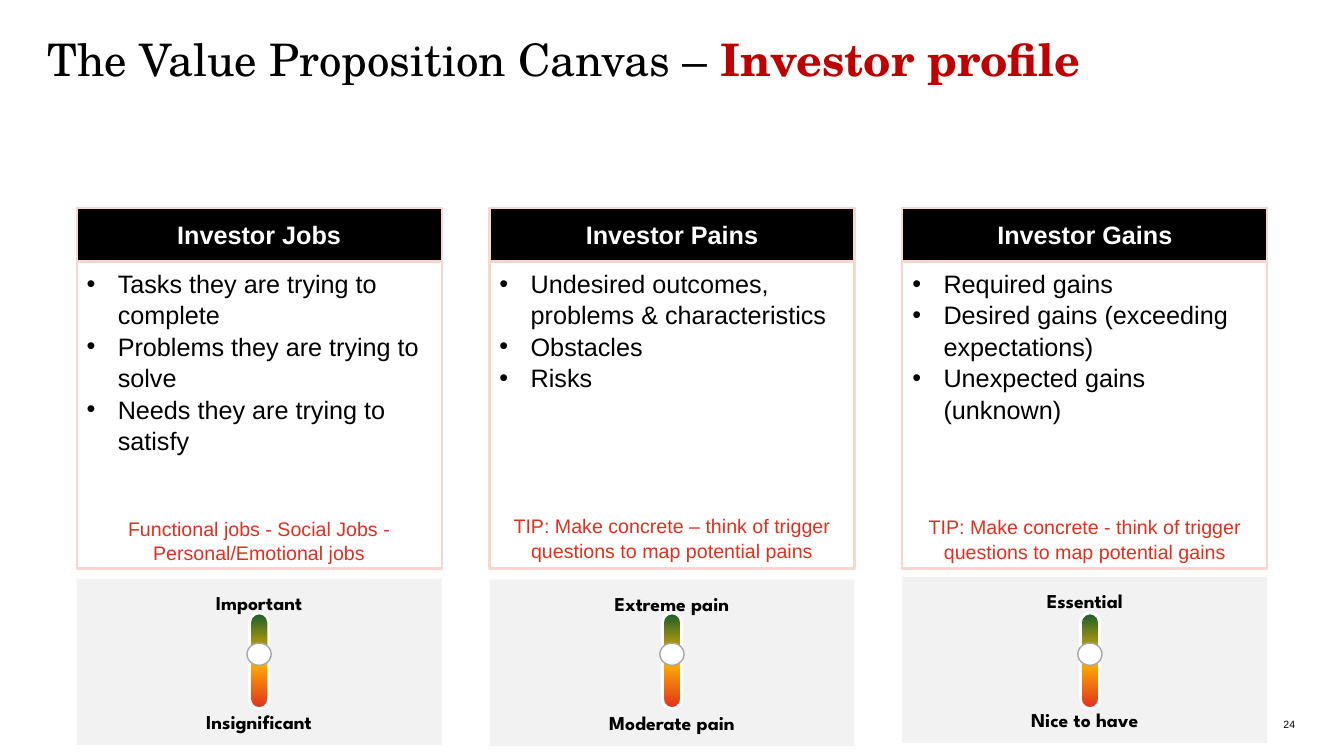
"""Build the investor profile slide with three columns and rating sliders."""
from copy import deepcopy

from lxml import etree
from pptx import Presentation
from pptx.dml.color import RGBColor
from pptx.enum.shapes import MSO_SHAPE
from pptx.enum.text import MSO_ANCHOR, PP_ALIGN
from pptx.oxml.ns import qn
from pptx.util import Inches, Pt

RECT = MSO_SHAPE.RECTANGLE
ROUND = MSO_SHAPE.ROUNDED_RECTANGLE
KNOB = MSO_SHAPE.FLOWCHART_CONNECTOR
MIDDLE, TOP = MSO_ANCHOR.MIDDLE, MSO_ANCHOR.TOP
CENTER, LEFT = PP_ALIGN.CENTER, PP_ALIGN.LEFT

HEX = {
    "black": "000000", "white": "FFFFFF", "title": "C00000",
    "tip": "E0301E", "amber": "FFB600", "green": "175C2C",
    "edge": "F9D5D2", "panel": "F2F2F2", "ring": "A6A6A6",
}
SANS, SERIF, LABEL = "Arial", "TeX Gyre Schola", "League Spartan"

WIDE, HIGH = 13.33, 7.5
START, STEP, SPAN = 0.76, 4.095, 3.62
ROWS = {"head": (2.06, 0.53), "body": (2.6, 3.04)}
RATE = 1.65
INDENT = 0.31
LINE = 21.5

COLS = [
    {"head": "Investor Jobs",
     "items": ["Tasks they are trying to complete",
               "Problems they are trying to solve",
               "Needs they are trying to satisfy"],
     "tip": "Functional jobs - Social Jobs - Personal/Emotional jobs",
     "gap": 2, "rate": 5.74, "ends": ["Important", "Insignificant"],
     "nudge": 0},
    {"head": "Investor Pains",
     "items": ["Undesired outcomes, problems & characteristics",
               "Obstacles", "Risks"],
     "tip": "TIP: Make concrete – think of trigger questions to map "
            "potential pains",
     "gap": 4, "rate": 5.75, "ends": ["Extreme pain", "Moderate pain"],
     "nudge": 0},
    {"head": "Investor Gains",
     "items": ["Required gains", "Desired gains (exceeding expectations)",
               "Unexpected gains (unknown)"],
     "tip": "TIP: Make concrete - think of trigger questions to map "
            "potential gains",
     "gap": 3, "rate": 5.72, "ends": ["Essential", "Nice to have"],
     "nudge": 0.05},
]


def color(name):
    return RGBColor.from_string(HEX[name])


def style(para, face, size, tone, bold=False):
    for run in para.runs:
        font = run.font
        font.name, font.size, font.bold = face, Pt(size), bold
        font.color.rgb = color(tone)


def add_shape(shapes, kind, box, fill=None, edge=None, width=1.5):
    shape = shapes.add_shape(kind, *map(Inches, box))
    shape.shadow.inherit = False
    if fill:
        shape.fill.solid()
        shape.fill.fore_color.rgb = color(fill)
    if edge:
        shape.line.color.rgb = color(edge)
        shape.line.width = Pt(width)
    else:
        shape.line.fill.background()
    return shape


def add_text(shapes, box, text):
    frame = shapes.add_textbox(*map(Inches, box)).text_frame
    frame.word_wrap = True
    frame.text = text
    return frame


def trim(frame):
    frame.margin_left = frame.margin_right = 0
    frame.margin_top = frame.margin_bottom = 0


def bullet(para):
    props = para._p.get_or_add_pPr()
    props.set("marL", str(Inches(INDENT)))
    props.set("indent", str(-Inches(INDENT)))
    etree.SubElement(props, qn("a:buFont")).set("typeface", SANS)
    etree.SubElement(props, qn("a:buChar")).set("char", "•")


def add_title(shapes):
    frame = add_text(shapes, (0.47, 0.38, 12.39, 1),
                     "The Value Proposition Canvas – ")
    trim(frame)
    para = frame.paragraphs[0]
    para.line_spacing = 0.9
    para.add_run().text = "Investor profile"
    style(para, SERIF, 32, "black")
    accent = para.runs[1].font
    accent.bold = True
    accent.color.rgb = color("title")


def add_number(shapes):
    frame = add_text(shapes, (12.73, 7.12, 0.17, 0.14), "24")
    trim(frame)
    frame.word_wrap = False
    style(frame.paragraphs[0], SANS, 7.5, "black")


def add_head(shapes, left, text):
    top, tall = ROWS["head"]
    shape = add_shape(shapes, RECT, (left, top, SPAN, tall), "black", "edge")
    frame = shape.text_frame
    frame.vertical_anchor = MIDDLE
    frame.text = text
    para = frame.paragraphs[0]
    para.alignment = CENTER
    style(para, SANS, 18, "white", True)


def add_body(shapes, left, col):
    top, tall = ROWS["body"]
    shape = add_shape(shapes, RECT, (left, top, SPAN, tall), "white", "edge")
    frame = shape.text_frame
    frame.vertical_anchor = TOP
    frame.text = "\n".join(col["items"] + [col["tip"]])
    *items, tip = frame.paragraphs
    for para in frame.paragraphs:
        para.line_spacing = 1.04
    for para in items:
        para.alignment = LEFT
        bullet(para)
        style(para, SANS, 18, "black")
    tip.alignment = CENTER
    tip.space_before = Pt(col["gap"] * LINE)
    style(tip, SANS, 14, "tip")


def blend(shape, tones):
    fill = shape.fill
    fill.gradient()
    fill.gradient_angle = 0
    first = shape._element.spPr.find(".//" + qn("a:gs"))
    first.addnext(deepcopy(first))
    for rank, (stop, tone) in enumerate(zip(fill.gradient_stops, tones)):
        stop.position = rank / (len(tones) - 1)
        stop.color.rgb = color(tone)


def add_slider(shapes, mid):
    group = shapes.add_group_shape().shapes
    long, thick, knob = 0.95, 0.19, 0.24
    bar = add_shape(group, ROUND, (mid - long / 2, 6.46, long, thick),
                    edge="white", width=2)
    bar.adjustments[0] = 0.5
    bar.rotation = 270
    blend(bar, ["tip", "amber", "green"])
    add_shape(group, KNOB, (mid - knob / 2, 6.38, knob, 0.22),
              "white", "ring", 1)


def add_rating(shapes, left, col):
    top, mid, wide = col["rate"], left + SPAN / 2, 2.44
    add_shape(shapes, RECT, (left, top, SPAN, RATE), "panel")
    frame = add_text(shapes, (mid - wide / 2, top + 0.03, wide, 1.6),
                     "\n".join(col["ends"]))
    frame.vertical_anchor = MIDDLE
    for para in frame.paragraphs:
        para.alignment = CENTER
        style(para, LABEL, 14, "black", True)
    frame.paragraphs[1].space_before = Pt(68)
    add_slider(shapes, mid + col["nudge"])


def main():
    deck = Presentation()
    deck.slide_width, deck.slide_height = Inches(WIDE), Inches(HIGH)
    shapes = deck.slides.add_slide(deck.slide_layouts[6]).shapes
    add_title(shapes)
    for rank, col in enumerate(COLS):
        left = START + rank * STEP
        add_body(shapes, left, col)
        add_head(shapes, left, col["head"])
        add_rating(shapes, left, col)
    add_number(shapes)
    deck.save("out.pptx")


if __name__ == "__main__":
    main()
